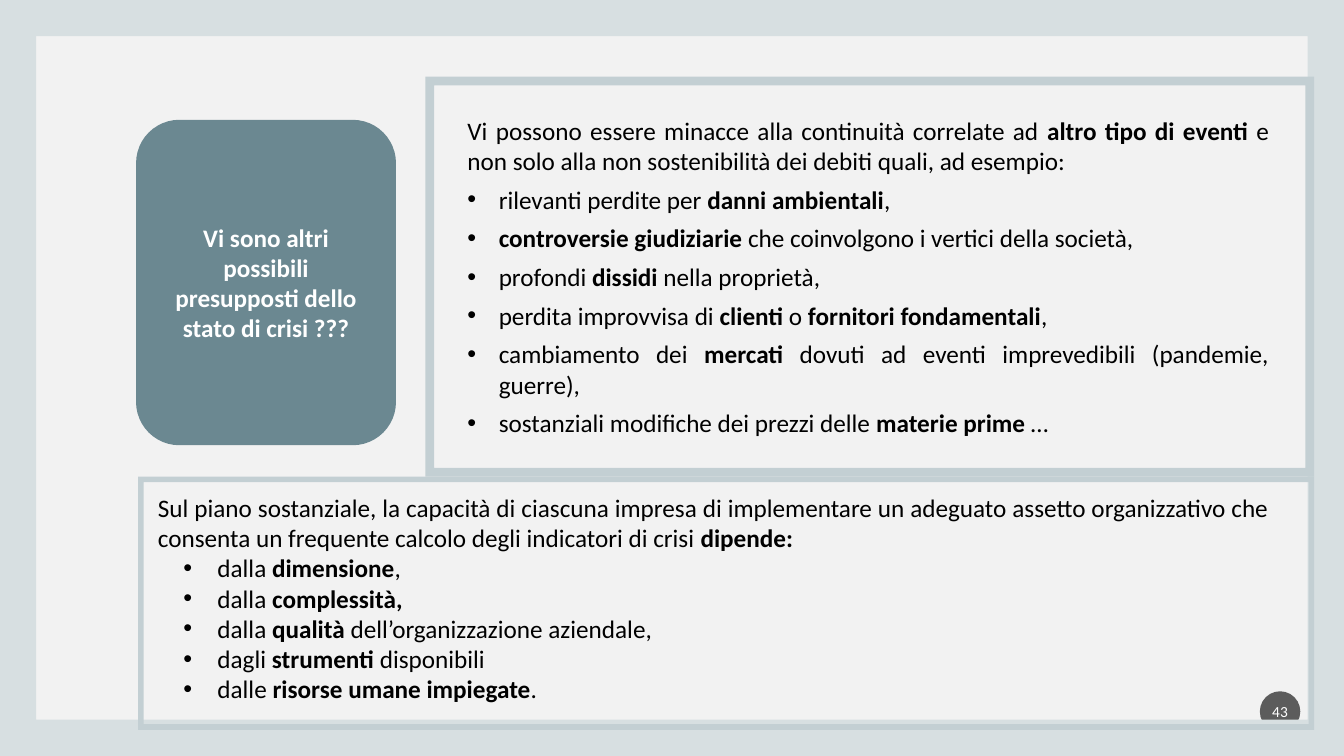
from lxml.etree import SubElement
from pptx import Presentation
from pptx.dml.color import RGBColor
from pptx.enum.shapes import MSO_SHAPE
from pptx.enum.text import MSO_ANCHOR, MSO_AUTO_SIZE, PP_ALIGN
from pptx.oxml.ns import qn
from pptx.util import Cm, Pt


def write(tf, lines, size=18, color="000000", align=PP_ALIGN.JUSTIFY,
          anchor=MSO_ANCHOR.TOP, margin=0.25, before=0, left=0, hang=0):
    """Fill a frame: *stars* mark bold, lines after the first are bullets."""
    tf.word_wrap = True
    tf.auto_size = MSO_AUTO_SIZE.NONE
    tf.vertical_anchor = anchor
    tf.margin_left = tf.margin_right = Cm(margin)
    tf.margin_top = tf.margin_bottom = Cm(0.13)
    for i, line in enumerate(lines):
        p = tf.paragraphs[0] if i == 0 else tf.add_paragraph()
        p.alignment = align
        p.line_spacing = 1.0
        p.space_before = Pt(before if i else 0)
        pPr = p._p.get_or_add_pPr()
        pPr.set("marL", str(Cm(left if i else 0)))
        pPr.set("indent", str(Cm(-hang if i else 0)))
        if i:
            SubElement(pPr, qn("a:buFont"), typeface="Arial")
            SubElement(pPr, qn("a:buChar"), char="•")
        else:
            SubElement(pPr, qn("a:buNone"))
        for j, part in enumerate(line.split("*")):
            if part:
                r = p.add_run()
                r.text = part
                r.font.name = "Calibri"
                r.font.size = Pt(size)
                r.font.bold = j % 2 == 1
                r.font.color.rgb = RGBColor.from_string(color)


def add_panel(s, kind, box, fill):
    sp = s.shapes.add_shape(kind, *map(Cm, box))
    sp.shadow.inherit = False
    sp.fill.solid()
    sp.fill.fore_color.rgb = RGBColor.from_string(fill)
    sp.line.fill.background()
    return sp


prs = Presentation()
prs.slide_width, prs.slide_height = Cm(33.87), Cm(19.05)
s = prs.slides.add_slide(prs.slide_layouts[3])
s.background.fill.solid()
s.background.fill.fore_color.rgb = RGBColor.from_string("F2F2F2")
title, threats, resources = s.placeholders

# Page number
badge = add_panel(s, MSO_SHAPE.OVAL, (31.75, 17.42, 1.02, 1.02), "1D1D1D")
SubElement(badge.fill._xPr.find(".//" + qn("a:srgbClr")), qn("a:alpha"), val="70000")
write(badge.text_frame, ["43"], size=11, color="FFFFFF", align=PP_ALIGN.CENTER,
      anchor=MSO_ANCHOR.MIDDLE, margin=0.05)

# Question on its rounded card
add_panel(s, MSO_SHAPE.ROUNDED_RECTANGLE, (3.43, 3.02, 6.55, 8.2), "6B8891")
s.shapes._spTree.append(title._element)
write(title.text_frame, ["*Vi sono altri possibili presupposti dello stato di crisi ???*"],
      color="FFFFFF", align=PP_ALIGN.CENTER, anchor=MSO_ANCHOR.MIDDLE)

# Threats to continuity
write(threats.text_frame, [
    "Vi possono essere minacce alla continuità correlate ad *altro tipo di eventi* e "
    "non solo alla non sostenibilità dei debiti quali, ad esempio:",
    "rilevanti perdite per *danni ambientali*,",
    "*controversie giudiziarie* che coinvolgono i vertici della società,",
    "profondi *dissidi* nella proprietà,",
    "perdita improvvisa di *clienti* o *fornitori fondamentali*,",
    "cambiamento dei *mercati* dovuti ad eventi imprevedibili (pandemie, guerre),",
    "sostanziali modifiche dei prezzi delle *materie prime* …",
], before=6, left=0.79, hang=0.79)

# What an adequate organisation depends on
write(resources.text_frame, [
    "Sul piano sostanziale, la capacità di ciascuna impresa di implementare un adeguato "
    "assetto organizzativo che consenta un frequente calcolo degli indicatori di crisi "
    "*dipende:*",
    "dalla *dimensione*,",
    "dalla *complessità,*",
    "dalla *qualità* dell’organizzazione aziendale,",
    "dagli *strumenti* disponibili",
    "dalle *risorse umane impiegate*.",
], left=1.5, hang=0.86)

# Placeholder positions
for sp, box in ((title, (3.75, 3.34, 5.91, 7.56)),
                (threats, (11.53, 2.77, 20.7, 8.46)),
                (resources, (3.73, 12.27, 28.5, 5.64))):
    sp.left, sp.top, sp.width, sp.height = map(Cm, box)

# Frames around the slide and the two lists
for box, thickness, fill in (((0, 0, 33.87, 19.05), 0.048, "D7DFE1"),
                             ((10.72, 1.93, 22.4, 10.08), 0.022, "C3CFD3"),
                             ((3.48, 12.01, 29.64, 6.38), 0.022, "C3CFD3")):
    frame = add_panel(s, MSO_SHAPE.FRAME, box, fill)
    frame.adjustments[0] = thickness

prs.save("out.pptx")
